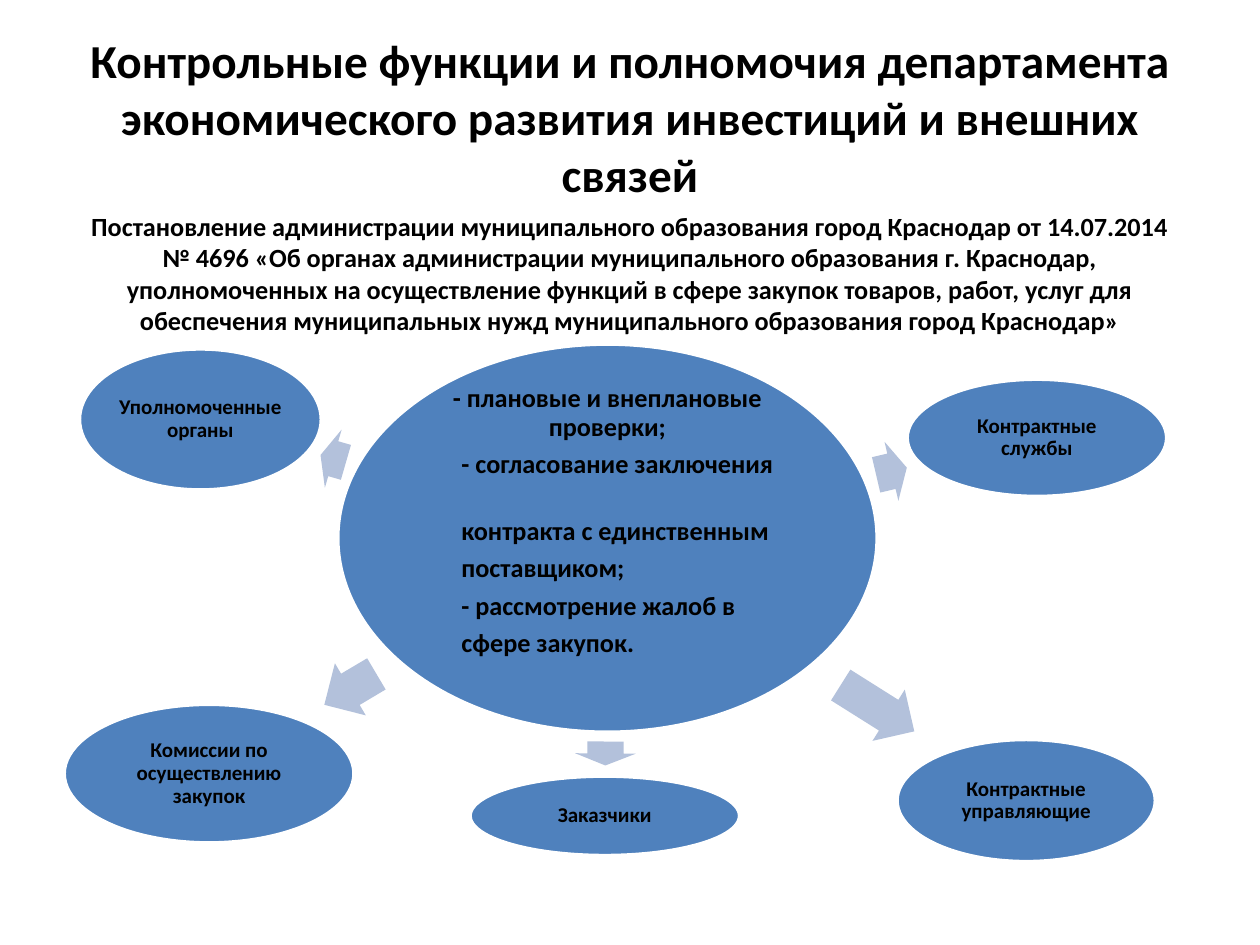
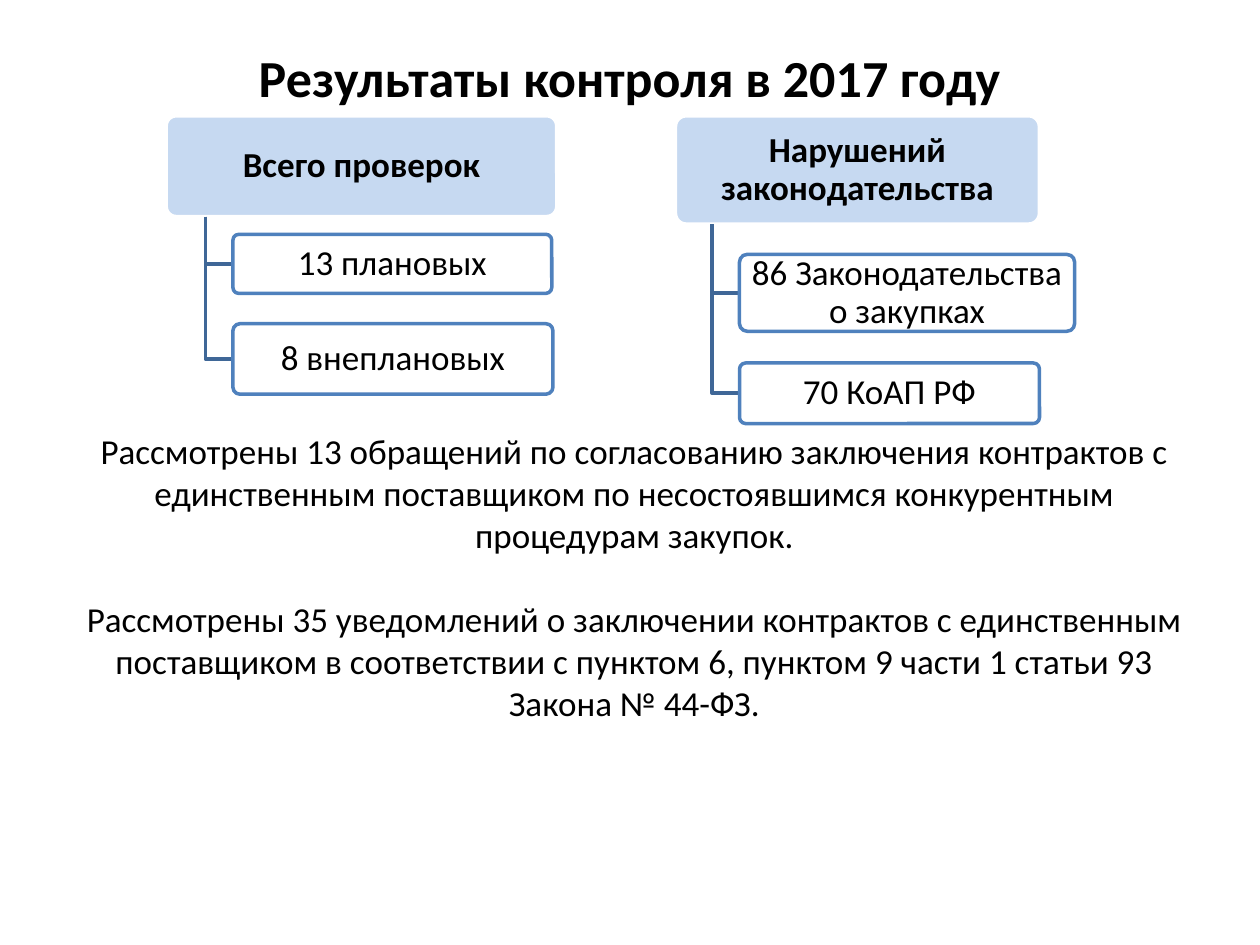
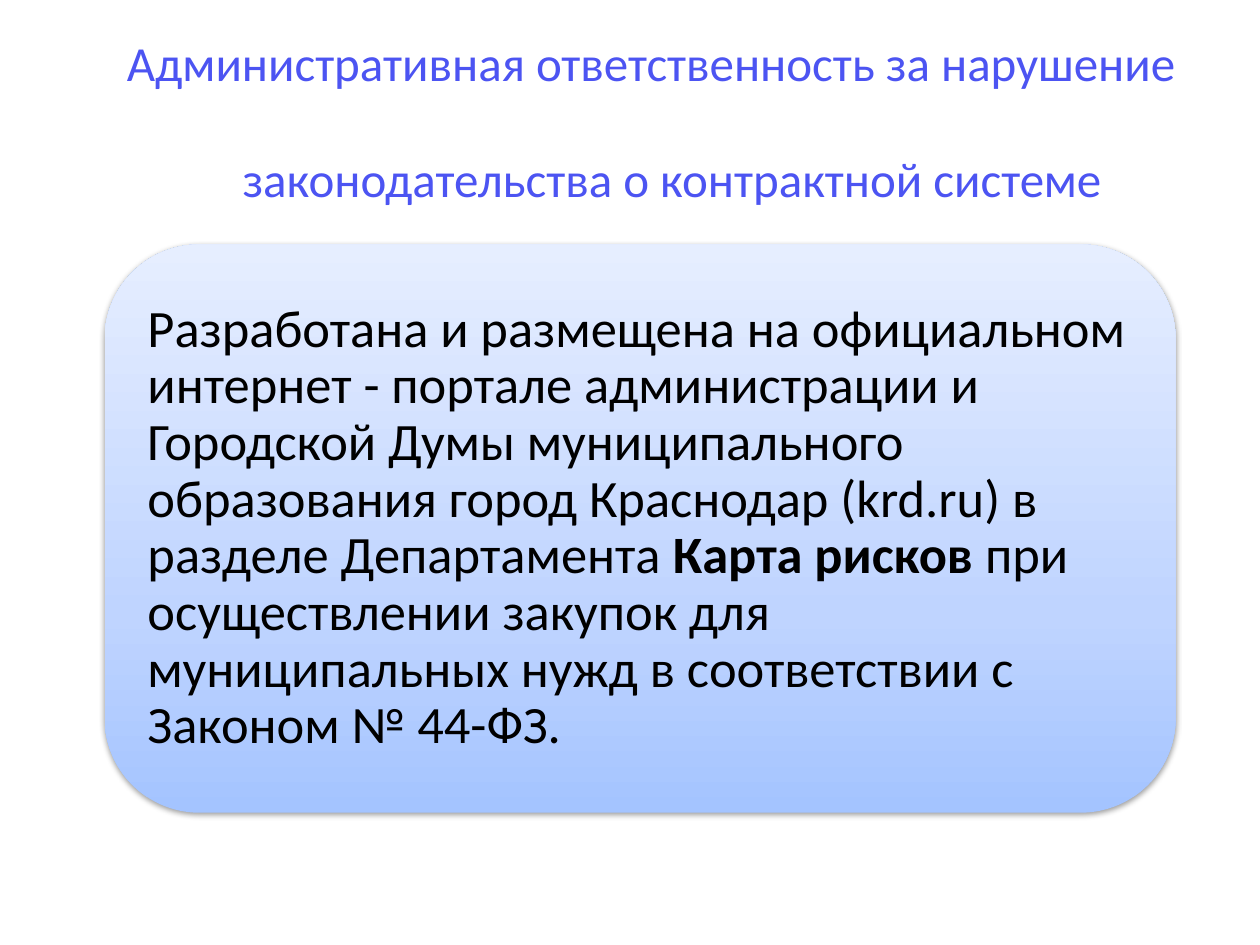
from dataclasses import dataclass

from lxml.etree import SubElement
from pptx import Presentation
from pptx.dml.color import RGBColor
from pptx.enum.shapes import MSO_SHAPE
from pptx.enum.text import MSO_ANCHOR, PP_ALIGN
from pptx.oxml.ns import qn
from pptx.util import Pt


@dataclass(frozen=True)
class Theme:
    font: str = "Calibri"
    black: str = "000000"
    white: str = "FFFFFF"
    blue: str = "4F81BD"
    pale_blue: str = "C6D9F1"
    arrow: str = "B3C1DB"
    branch: str = "3F6797"
    violet: str = "4C54F2"
    gradient: tuple = ((0, "A4C4FF"), (35, "BFD4FF"), (100, "E6EEFF"))
    long_title: float = 27
    title: float = 29.7
    light_title: float = 28
    card: float = 30
    body: float = 20
    detail: float = 15
    label: float = 12
    line: float = 2
    indent: float = 24


class Deck:
    def __init__(self, theme):
        self.theme = theme
        self.presentation = Presentation()
        self.presentation.slide_width = Pt(720)
        self.presentation.slide_height = Pt(540)
        self.slide = None

    def new_slide(self):
        self.slide = self.presentation.slides.add_slide(self.presentation.slide_layouts[6])

    def fill_text(self, frame, paragraphs, size, bold=False, color=None, emphasis=None,
                  align=PP_ALIGN.CENTER, anchor=MSO_ANCHOR.MIDDLE, spacing=1.0, insets=(7.2, 3.6)):
        """Fill a text frame; the emphasis phrase inside a paragraph turns bold."""
        frame.word_wrap = True
        frame.vertical_anchor = anchor
        frame.margin_left = frame.margin_right = Pt(insets[0])
        frame.margin_top = frame.margin_bottom = Pt(insets[1])
        for index, text in enumerate(paragraphs):
            paragraph = frame.add_paragraph() if index else frame.paragraphs[0]
            paragraph.alignment = align
            paragraph.line_spacing = spacing
            for part in text.partition(emphasis) if emphasis else (text,):
                run = paragraph.add_run()
                run.text = part
                run.font.name = self.theme.font
                run.font.size = Pt(size)
                run.font.bold = bold or part == emphasis
                run.font.color.rgb = RGBColor.from_string(color or self.theme.black)
        return frame

    def text(self, box, paragraphs, size, **style):
        frame = self.slide.shapes.add_textbox(*map(Pt, box)).text_frame
        return self.fill_text(frame, paragraphs, size, **style)

    def shape(self, kind, box, fill=None, line=None, adjustments=()):
        shape = self.slide.shapes.add_shape(kind, *map(Pt, box))
        shape.shadow.inherit = False
        for index, value in enumerate(adjustments):
            shape.adjustments[index] = value
        if fill:
            shape.fill.solid()
            shape.fill.fore_color.rgb = RGBColor.from_string(fill)
        self.outline(shape, line)
        return shape

    def outline(self, shape, color):
        if color:
            shape.line.color.rgb = RGBColor.from_string(color)
            shape.line.width = Pt(self.theme.line)
        else:
            shape.line.fill.background()

    def ellipse(self, box, paragraphs, size):
        oval = self.shape(MSO_SHAPE.OVAL, box, self.theme.blue, self.theme.white)
        return self.fill_text(oval.text_frame, paragraphs, size, bold=True, spacing=0.9,
                              insets=(1.5, 1.5))

    def arrow(self, box, rotation):
        arrow = self.shape(MSO_SHAPE.RIGHT_ARROW, box, self.theme.arrow, adjustments=(0.6, 0.5))
        arrow.rotation = rotation

    def panel(self, box, label, fill, line, bold=False):
        panel = self.shape(MSO_SHAPE.ROUNDED_RECTANGLE, box, fill, line, (0.1,))
        self.fill_text(panel.text_frame, [label], self.theme.body, bold=bold, spacing=0.9,
                       insets=(3, 2))

    def branch(self, x, top, end_x, end_y):
        """Draw an L-shaped line down from the parent and right to the child."""
        builder = self.slide.shapes.build_freeform(Pt(x), Pt(top))
        builder.add_line_segments([(Pt(x), Pt(end_y)), (Pt(end_x), Pt(end_y))], close=False)
        branch = builder.convert_to_shape()
        branch.shadow.inherit = False
        branch.fill.background()
        self.outline(branch, self.theme.branch)

    def hierarchy(self, heading, box, children):
        left, top, width, height = box
        self.panel(box, heading, self.theme.pale_blue, self.theme.white, bold=True)
        trunk = left + width / 10
        child_left = trunk + 15.8
        for label, child_top, child_width, child_height in children:
            self.branch(trunk, top + height, child_left, child_top + child_height / 2)
            self.panel((child_left, child_top, child_width, child_height), label,
                       self.theme.white, self.theme.blue)

    def gradient_card(self, box, text, emphasis):
        card = self.shape(MSO_SHAPE.ROUNDED_RECTANGLE, box)
        card.fill.gradient()
        card.fill.gradient_angle = 90
        properties = card.element.spPr
        stops = properties.find(".//" + qn("a:gsLst"))
        for stop in list(stops):
            stops.remove(stop)
        for position, color in self.theme.gradient:
            stop = SubElement(stops, qn("a:gs"), pos=str(position * 1000))
            SubElement(stop, qn("a:srgbClr"), val=color)
        shadow = SubElement(properties.find(qn("a:effectLst")), qn("a:outerShdw"),
                            blurRad=str(Pt(3.1)), dist=str(Pt(1.6)), dir="5400000", rotWithShape="0")
        shade = SubElement(shadow, qn("a:srgbClr"), val=self.theme.black)
        SubElement(shade, qn("a:alpha"), val="38000")
        self.fill_text(card.text_frame, [text], self.theme.card, emphasis=emphasis,
                       align=PP_ALIGN.LEFT, spacing=0.9, insets=(8.64, 8.64))

    def indent(self, paragraph):
        paragraph._p.get_or_add_pPr().set("marL", str(Pt(self.theme.indent)))


def add_powers_slide(deck):
    theme = deck.theme
    deck.new_slide()
    deck.text((36, 21.6, 648, 90),
              ["Контрольные функции и полномочия департамента экономического развития "
               "инвестиций и внешних связей"], theme.long_title, bold=True)
    deck.text((36, 116.6, 648, 80),
              ["Постановление администрации муниципального образования город Краснодар от 14.07.2014 "
               "№ 4696 «Об органах администрации муниципального образования г. Краснодар, "
               "уполномоченных на осуществление функций в сфере закупок товаров, работ, услуг для "
               "обеспечения муниципальных нужд муниципального образования город Краснодар»"],
              theme.detail, bold=True, anchor=MSO_ANCHOR.TOP)

    powers = deck.ellipse((193, 196.6, 308.2, 221.8),
                          ["- плановые и внеплановые проверки;",
                           "- согласование заключения",
                           "контракта с единственным",
                           "поставщиком;",
                           "- рассмотрение жалоб в",
                           "сфере закупок."], theme.detail)
    powers.margin_bottom = Pt(20)
    for paragraph in powers.paragraphs:
        paragraph.space_after = Pt(5.25)
    for paragraph in powers.paragraphs[1:]:
        paragraph.alignment = PP_ALIGN.LEFT
        deck.indent(paragraph)
    powers.paragraphs[2].space_before = Pt(16.5)

    arrow_height = 34.6
    controlled_bodies = (
        ("Заказчики", (268.6, 443.5, 154, 45.4), (339.1, 413.3, 13.7), 90.5),
        ("Контрактные службы", (518.4, 216.7, 148.3, 67), (500.4, 252, 18), 346.8),
        ("Контрактные управляющие", (512.6, 422.6, 147.6, 69.8), (476.6, 387.4, 49.7), 32.2),
        ("Комиссии по осуществлению закупок", (36.7, 402.5, 165.6, 79.2), (182.9, 376.6, 34.6), 149.3),
        ("Уполномоченные органы", (45.4, 199.4, 138.2, 80.6), (182.9, 244.8, 15.1), 196.1),
    )
    for label, box, arrow, rotation in controlled_bodies:
        deck.arrow((*arrow, arrow_height), rotation)
        deck.ellipse(box, [label], theme.label)


def add_results_slide(deck):
    theme = deck.theme
    deck.new_slide()
    deck.text((36, 21.6, 648, 44), ["Результаты контроля в 2017 году"], theme.title, bold=True)
    deck.hierarchy("Всего проверок", (95, 66.2, 223.2, 57.6),
                   [("13 плановых", 133.9, 182.2, 33.8), ("8 внеплановых", 185, 182.9, 40.3)])
    deck.hierarchy("Нарушений законодательства", (386, 66.2, 208, 61.9),
                   [("86 Законодательства о закупках", 145.4, 191.5, 43.9),
                    ("70 КоАП РФ", 207.4, 171.4, 34.6)])
    reviews = deck.text(
        (31, 242, 663, 226.8),
        ["Рассмотрены 13 обращений по согласованию заключения контрактов с единственным "
         "поставщиком по несостоявшимся конкурентным процедурам закупок.",
         "Рассмотрены 35 уведомлений о заключении контрактов с единственным поставщиком в "
         "соответствии с пунктом 6, пунктом 9 части 1 статьи 93 Закона № 44-ФЗ."],
        theme.body, anchor=MSO_ANCHOR.TOP)
    reviews.paragraphs[1].space_before = Pt(24)


def add_liability_slide(deck):
    theme = deck.theme
    deck.new_slide()
    title = deck.text((59.8, 26, 624.2, 85),
                      ["Административная ответственность за нарушение",
                       "законодательства о контрактной системе"],
                      theme.light_title, color=theme.violet)
    title.paragraphs[1].space_before = Pt(33)
    deck.indent(title.paragraphs[1])
    deck.gradient_card(
        (59.8, 139.7, 612, 324.7),
        "Разработана и размещена на официальном интернет - портале администрации и Городской Думы "
        "муниципального образования город Краснодар (krd.ru) в разделе Департамента Карта рисков "
        "при осуществлении закупок для муниципальных нужд в соответствии с Законом № 44-ФЗ.",
        emphasis="Карта рисков")


def main():
    deck = Deck(Theme())
    add_powers_slide(deck)
    add_results_slide(deck)
    add_liability_slide(deck)
    deck.presentation.save("out.pptx")


if __name__ == "__main__":
    main()
